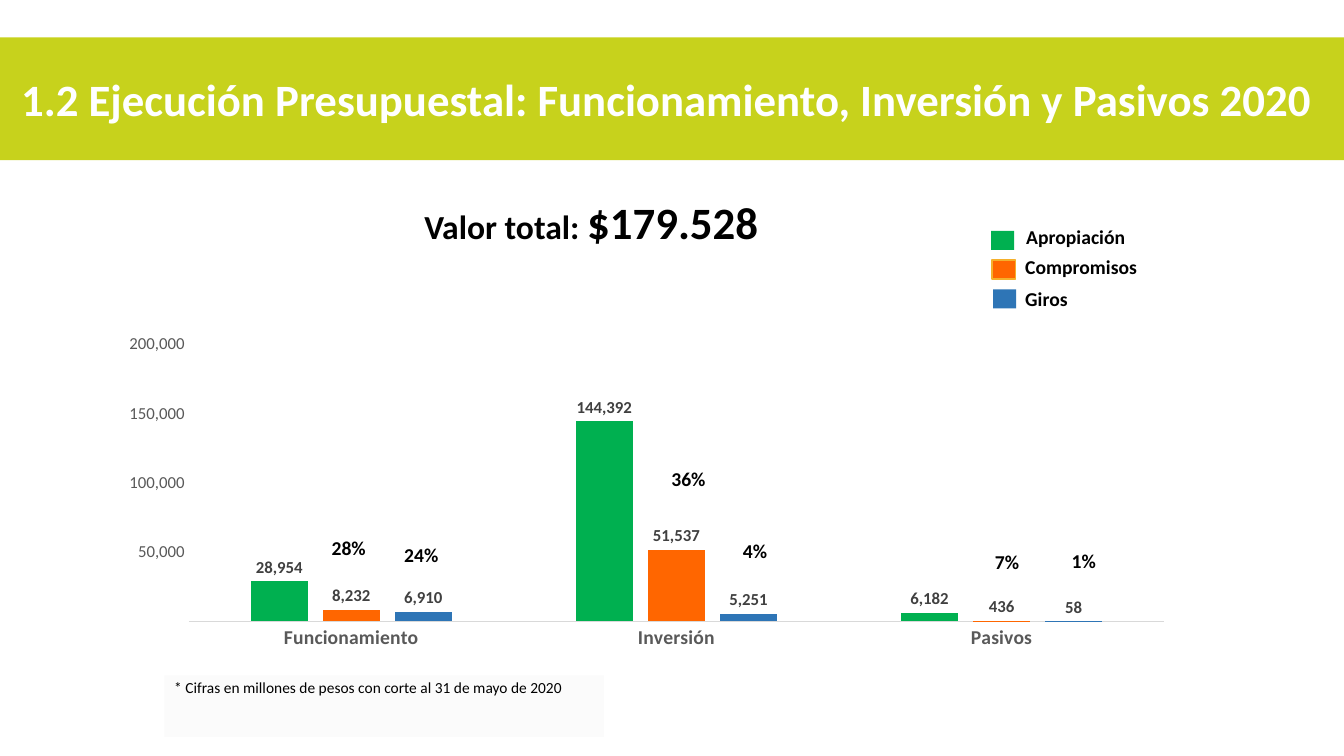
from lxml.etree import SubElement
from pptx import Presentation
from pptx.chart.data import CategoryChartData
from pptx.dml.color import RGBColor
from pptx.enum.chart import XL_CHART_TYPE, XL_LABEL_POSITION, XL_TICK_MARK
from pptx.enum.shapes import MSO_SHAPE
from pptx.enum.text import MSO_ANCHOR, PP_ALIGN
from pptx.oxml.ns import qn
from pptx.util import Inches, Pt

rgb = RGBColor.from_string


def style(font, size, color="000000", bold=True):
    font.name, font.size, font.bold = "Calibri", Pt(size), bold
    font.color.rgb = rgb(color)


def box(kind, left, top, width, height, fill=None):
    """Add a filled rectangle, or a text box when kind is "text"."""
    spot = [Inches(n) for n in (left, top, width, height)]
    if kind == "text":
        shape = slide.shapes.add_textbox(*spot)
        shape.text_frame.word_wrap = True
    else:
        shape = slide.shapes.add_shape(MSO_SHAPE.RECTANGLE, *spot)
        shape.shadow.inherit = False
        shape.fill.solid()
        shape.fill.fore_color.rgb = rgb(fill)
        shape.line.fill.background()
    return shape


prs = Presentation()
prs.slide_width, prs.slide_height = Inches(13.33), Inches(7.5)
slide = prs.slides.add_slide(prs.slide_layouts[5])

# Title on its band
title = slide.shapes.title
title.left, title.top = Inches(0.11), Inches(0.66)
title.width, title.height = Inches(13.11), Inches(0.64)
title.text = "1.2 Ejecución Presupuestal: Funcionamiento, Inversión y Pasivos 2020"
title.text_frame.vertical_anchor = MSO_ANCHOR.TOP
head = title.text_frame.paragraphs[0]
head.alignment = PP_ALIGN.LEFT
style(head.font, 32, "FFFFFF")
band = box("rect", 0, 0.37, 13.33, 1.22, "C7D21C")
title._element.addprevious(band._element)

# Chart, in millions of pesos
series = [
    ("Apropiación", "00B050", (28954, 144392, 6182)),
    ("Compromisos", "FF6600", (8232, 51537, 436)),
    ("Giros", "2E75B6", (6910, 5251, 58)),
]
million = 10 ** 6
data = CategoryChartData(number_format="#,###,,")
data.categories = ["Funcionamiento", "Inversión", "Pasivos"]
for name, color, values in series:
    data.add_series(name, [v * million for v in values])
chart = slide.shapes.add_chart(
    XL_CHART_TYPE.COLUMN_CLUSTERED, Inches(1.07), Inches(3.25),
    Inches(10.69), Inches(3.26), data).chart
chart.has_legend = chart.has_title = False
style(chart.font, 10, bold=False)

cats, vals = chart.category_axis, chart.value_axis
for axis in (cats, vals):
    axis.major_tick_mark = axis.minor_tick_mark = XL_TICK_MARK.NONE
    axis.has_major_gridlines = False
style(cats.tick_labels.font, 14, "595959")
cats.format.line.color.rgb = rgb("D9D9D9")
cats.format.line.width = Pt(0.75)
style(vals.tick_labels.font, 12, "595959", False)
vals.tick_labels.number_format = "#,###,,"
vals.tick_labels.number_format_is_linked = False
vals.format.line.fill.background()
vals.minimum_scale, vals.maximum_scale = 0, 200000 * million
vals.major_unit = 50000 * million

plot = chart.plots[0]
plot.gap_width, plot.overlap, plot.vary_by_categories = 219, -27, False
for bars, (name, color, values) in zip(plot.series, series):
    bars.format.fill.solid()
    bars.format.fill.fore_color.rgb = rgb(color)
    bars.invert_if_negative = False
    labels = bars.data_labels
    labels.show_value = True
    labels.position = XL_LABEL_POSITION.OUTSIDE_END
    labels.number_format = "#,###,,"
    labels.number_format_is_linked = False
    style(labels.font, 12, "404040")

# Legend
keys = []
for i, (name, color, values) in enumerate(series):
    keys.append(box("rect", 9.83 + 0.01 * i, 2.29 + 0.29 * i, 0.23, 0.19, color))
keys[1].line.color.rgb = rgb("F5B02B")
keys[1].line.width = Pt(1)

# Legend names and shares of the budget
notes = [
    ("Apropiación", 10.08, 2.18, 1.45), ("Compromisos", 10.07, 2.48, 1.45),
    ("Giros", 10.07, 2.8, 1.45),
    ("28%", 3.19, 5.27, 0.62), ("24%", 3.91, 5.34, 0.62),
    ("36%", 6.56, 4.58, 0.62), ("4%", 7.27, 5.3, 0.62),
    ("7%", 9.77, 5.41, 0.62), ("1%", 10.53, 5.4, 0.62),
]
for text, left, top, width in notes:
    para = box("text", left, top, width, 0.34).text_frame.paragraphs[0]
    para.text = text
    style(para.font, 14)

# Total
total = box("text", 4.11, 1.88, 4, 1.04).text_frame.paragraphs[0]
for text, size in (("Valor total: ", 24), ("$179.528", 32)):
    run = total.add_run()
    run.text = text
    style(run.font, size)

# Footnote
foot = box("rect", 1.63, 6.7, 4.36, 0.61, "F8F8F8")
tint = foot._element.spPr.find(qn("a:solidFill"))[0]
SubElement(tint, qn("a:alpha")).set("val", "46000")
foot.text_frame.vertical_anchor = MSO_ANCHOR.TOP
para = foot.text_frame.paragraphs[0]
para.text = "* Cifras en millones de pesos con corte al 31 de mayo de 2020"
para.alignment = PP_ALIGN.JUSTIFY
para.line_spacing = 0.9
style(para.font, 11, bold=False)

prs.save("out.pptx")
